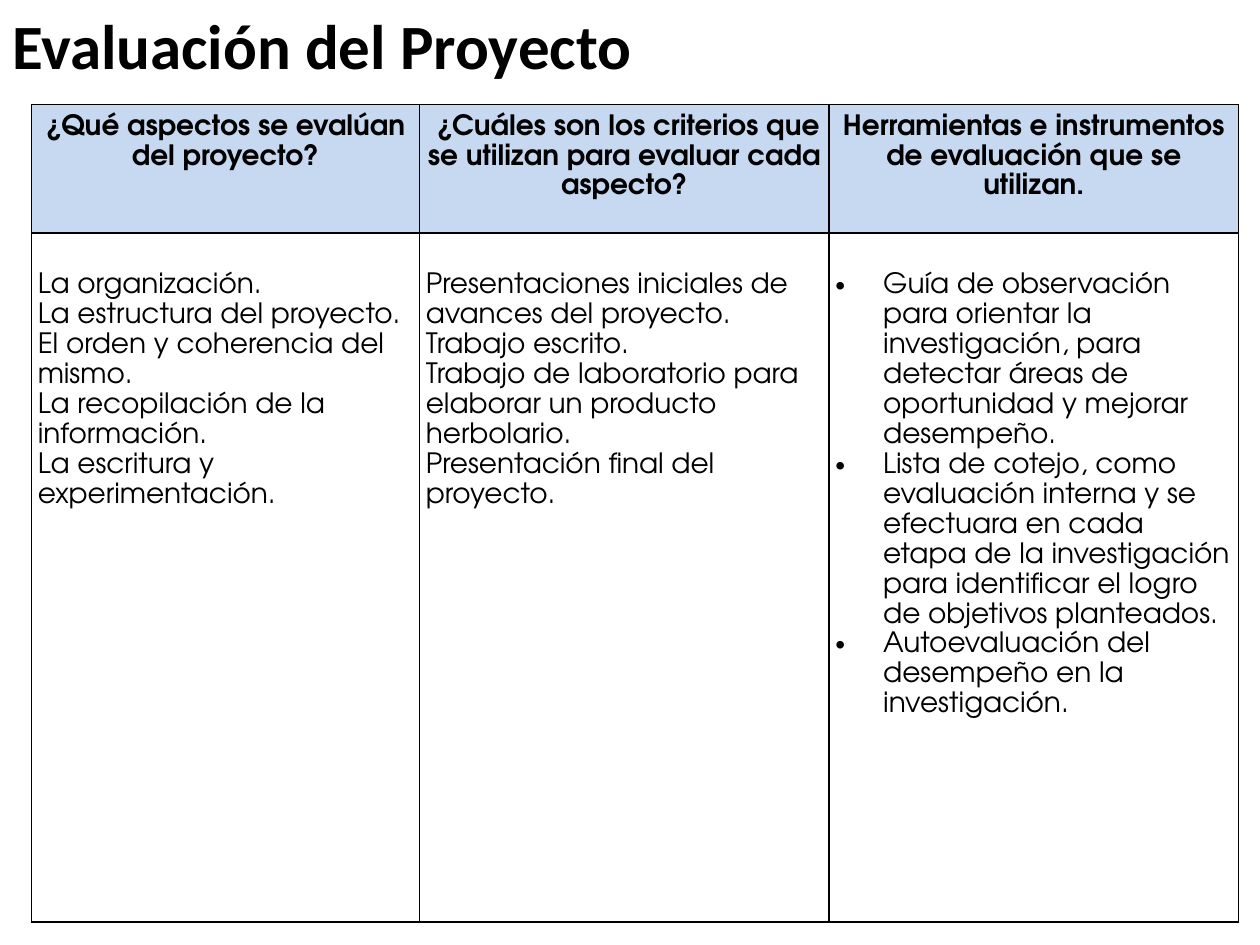
from pptx import Presentation
from pptx.dml.color import RGBColor
from pptx.enum.text import MSO_AUTO_SIZE, PP_ALIGN
from pptx.oxml import parse_xml
from pptx.oxml.ns import nsdecls
from pptx.util import Inches, Pt

TITLE = "Evaluación del Proyecto"
HEADS = [
    "¿Qué aspectos se evalúan del proyecto?",
    " ¿Cuáles son los criterios que se utilizan para evaluar cada aspecto?",
    "Herramientas e instrumentos de evaluación que se utilizan.",
]
BODIES = [
    ["La organización.",
     "La estructura del proyecto.",
     "El orden y coherencia del mismo.",
     "La recopilación de la información.",
     "La escritura y experimentación."],
    ["Presentaciones iniciales de avances del proyecto.",
     "Trabajo escrito.",
     "Trabajo de laboratorio para elaborar un producto herbolario.",
     "Presentación final del proyecto."],
    ["Guía de observación para orientar la investigación, para detectar áreas "
     "de oportunidad y mejorar desempeño.",
     "Lista de cotejo, como evaluación interna y se efectuara en cada etapa de "
     "la investigación para identificar el logro de objetivos planteados.",
     "Autoevaluación del desempeño en la investigación."],
]
COLORS = {"ink": "000000", "head": "C6D9F1"}
WIDTHS = [3.08, 3.25, 3.25]
HEIGHTS = [1.01, 5.47]
PAD, GAP, INDENT = 0.05, 0.24, 0.38
FONTS = {
    "title": {"name": "Calibri", "size": Pt(36), "bold": True},
    "head": {"name": "TeX Gyre Adventor", "size": Pt(16), "bold": True},
    "body": {"name": "TeX Gyre Adventor", "size": Pt(16), "bold": False},
}


def write(para, text, style):
    run = para.add_run()
    run.text = text
    for key, value in FONTS[style].items():
        setattr(run.font, key, value)
    run.font.color.rgb = RGBColor.from_string(COLORS["ink"])


def bullet(para):
    props = para._p.get_or_add_pPr()
    props.set("marL", str(Inches(INDENT)))
    props.set("indent", str(-Inches(INDENT)))
    props.append(parse_xml(f'<a:buFont {nsdecls("a")} typeface="Arial"/>'))
    props.append(parse_xml(f'<a:buChar {nsdecls("a")} char="•"/>'))


def border(cell):
    props = cell._tc.get_or_add_tcPr()
    for spot, side in enumerate(("lnL", "lnR", "lnT", "lnB")):
        props.insert(spot, parse_xml(
            f'<a:{side} {nsdecls("a")} w="{Pt(1)}"><a:solidFill>'
            f'<a:srgbClr val="{COLORS["ink"]}"/></a:solidFill></a:{side}>'))


def fill_cell(cell, lines, style, listed=False):
    head = style == "head"
    margins = {"left": PAD, "right": PAD, "bottom": PAD,
               "top": PAD if head else PAD + GAP}
    for side, size in margins.items():
        setattr(cell, f"margin_{side}", Inches(size))
    if head:
        cell.fill.solid()
        cell.fill.fore_color.rgb = RGBColor.from_string(COLORS["head"])
    else:
        cell.fill.background()
    border(cell)
    frame = cell.text_frame
    for index, line in enumerate(lines):
        para = frame.add_paragraph() if index else frame.paragraphs[0]
        para.alignment = PP_ALIGN.CENTER if head else PP_ALIGN.LEFT
        para.line_spacing = 1.15
        if listed:
            bullet(para)
        write(para, line, style)


deck = Presentation()
deck.slide_width, deck.slide_height = Inches(10), Inches(7.5)
slide = deck.slides.add_slide(deck.slide_layouts[6])

box = slide.shapes.add_textbox(0, 0, Inches(5.3), Inches(0.71))
box.text_frame.word_wrap = False
box.text_frame.auto_size = MSO_AUTO_SIZE.SHAPE_TO_FIT_TEXT
write(box.text_frame.paragraphs[0], TITLE, "title")

table = slide.shapes.add_table(
    len(HEIGHTS), len(WIDTHS), Inches(0.25), Inches(0.83),
    Inches(sum(WIDTHS)), Inches(sum(HEIGHTS))).table
table.horz_banding = False
for row, size in zip(table.rows, HEIGHTS):
    row.height = Inches(size)
for col, (size, head, body) in enumerate(zip(WIDTHS, HEADS, BODIES)):
    table.columns[col].width = Inches(size)
    fill_cell(table.cell(0, col), [head], "head")
    fill_cell(table.cell(1, col), body, "body", listed=col == 2)

deck.save("out.pptx")
